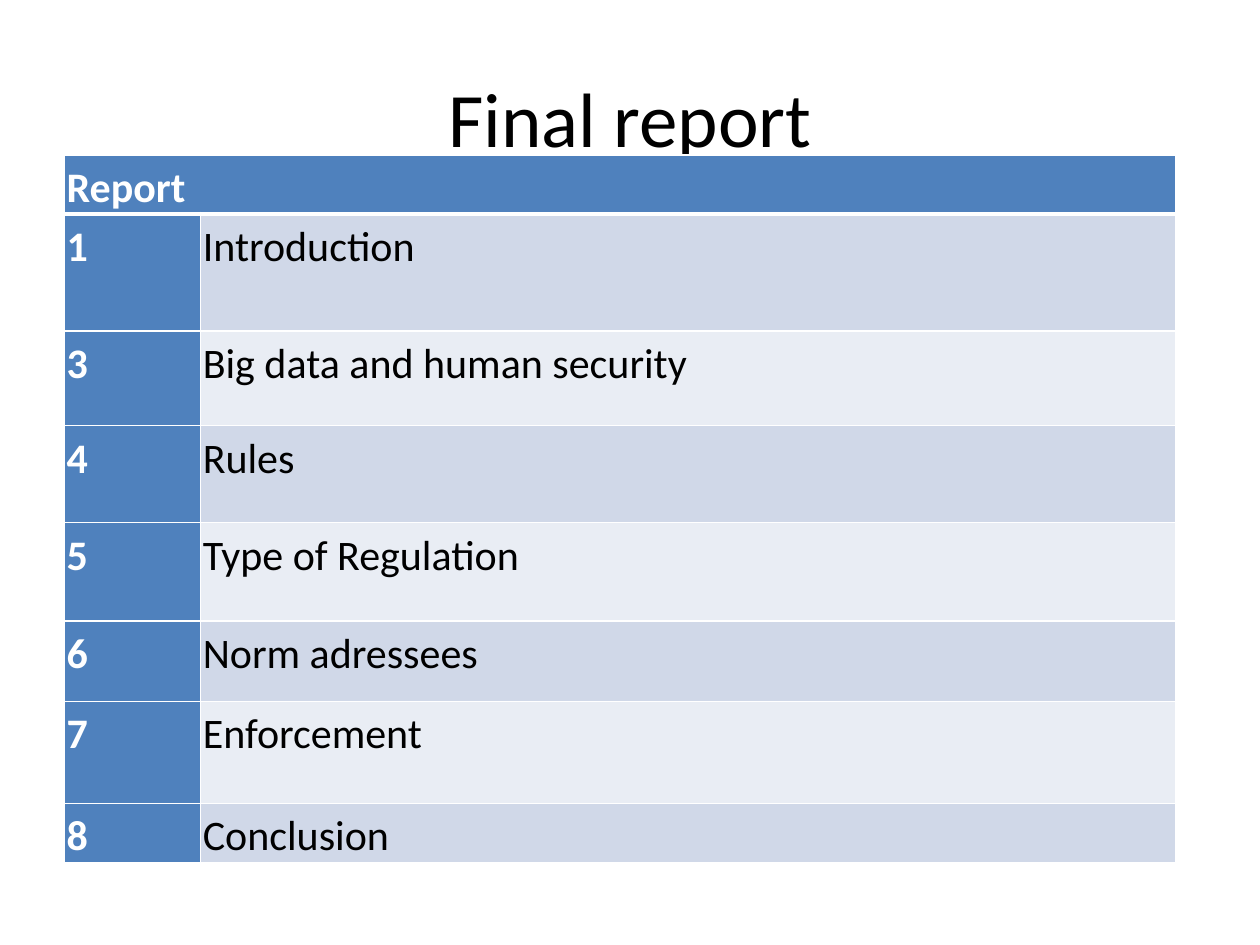
"""Build the final report slide with its table of chapters."""
from dataclasses import dataclass

from lxml.etree import SubElement
from pptx import Presentation
from pptx.dml.color import RGBColor
from pptx.enum.text import MSO_ANCHOR, PP_ALIGN
from pptx.oxml.ns import qn
from pptx.table import _Cell
from pptx.util import Inches, Pt

FONT = "Calibri"
COLORS = {
    "white": "FFFFFF",
    "black": "000000",
    "accent": "4F81BD",
    "odd_band": "D0D8E8",
    "even_band": "E9EDF4",
}
COLUMN_WIDTHS = (1.08, 7.74)
HEADER_HEIGHT = 0.46


@dataclass(frozen=True)
class Chapter:
    number: str
    title: str
    height: float


CHAPTERS = (
    Chapter("1", "Introduction", 0.93),
    Chapter("3", "Big data and human security", 0.75),
    Chapter("4", "Rules", 0.77),
    Chapter("5", "Type of Regulation", 0.78),
    Chapter("6", "Norm adressees", 0.64),
    Chapter("7", "Enforcement", 0.81),
    Chapter("8", "Conclusion", 0.46),
)


def set_borders(cell: _Cell, bottom: float, top: float) -> None:
    properties = cell._tc.get_or_add_tcPr()
    widths = {"a:lnL": 1, "a:lnR": 1, "a:lnT": top, "a:lnB": bottom}
    for index, (tag, width) in enumerate(widths.items()):
        line = SubElement(properties, qn(tag), w=str(Pt(width)))
        fill = SubElement(line, qn("a:solidFill"))
        SubElement(fill, qn("a:srgbClr"), val=COLORS["white"])
        properties.insert(index, line)


def style_cell(cell: _Cell, text: str, fill: str, color: str, bold: bool,
               top: float = 1, bottom: float = 1) -> None:
    cell.margin_left = cell.margin_right = Inches(0.02)
    cell.margin_top = cell.margin_bottom = 0
    cell.fill.solid()
    cell.fill.fore_color.rgb = RGBColor.from_string(COLORS[fill])
    cell.text = text
    paragraph = cell.text_frame.paragraphs[0]
    paragraph.line_spacing = 1.15
    paragraph.font.name = FONT
    paragraph.font.size = Pt(24)
    paragraph.font.bold = bold
    paragraph.font.color.rgb = RGBColor.from_string(COLORS[color])
    set_borders(cell, bottom, top)


def main() -> None:
    presentation = Presentation()
    presentation.slide_width = Inches(10)
    presentation.slide_height = Inches(7.5)
    slide = presentation.slides.add_slide(presentation.slide_layouts[5])

    title = slide.shapes.title
    title.left, title.top = Inches(0.5), Inches(0.3)
    title.width, title.height = Inches(9), Inches(1.25)
    title.text_frame.text = "Final report"
    title.text_frame.vertical_anchor = MSO_ANCHOR.MIDDLE
    paragraph = title.text_frame.paragraphs[0]
    paragraph.alignment = PP_ALIGN.CENTER
    paragraph.font.name = FONT
    paragraph.font.size = Pt(44)
    paragraph.font.color.rgb = RGBColor.from_string(COLORS["black"])

    heights = [HEADER_HEIGHT] + [chapter.height for chapter in CHAPTERS]
    table = slide.shapes.add_table(
        len(heights), len(COLUMN_WIDTHS), Inches(0.51), Inches(1.23),
        Inches(sum(COLUMN_WIDTHS)), Inches(sum(heights))).table
    table.first_col = True
    for column, width in zip(table.columns, COLUMN_WIDTHS):
        column.width = Inches(width)
    for row, height in zip(table.rows, heights):
        row.height = Inches(height)

    style_cell(table.cell(0, 0), "Report", "accent", "white", True, bottom=3)
    style_cell(table.cell(0, 1), "", "accent", "white", True, bottom=3)
    table.cell(0, 0).merge(table.cell(0, 1))
    for index, chapter in enumerate(CHAPTERS, start=1):
        band = "odd_band" if index % 2 else "even_band"
        top = 3 if index == 1 else 1
        style_cell(table.cell(index, 0), chapter.number, "accent", "white", True, top)
        style_cell(table.cell(index, 1), chapter.title, band, "black", False, top)

    presentation.save("out.pptx")


if __name__ == "__main__":
    main()
